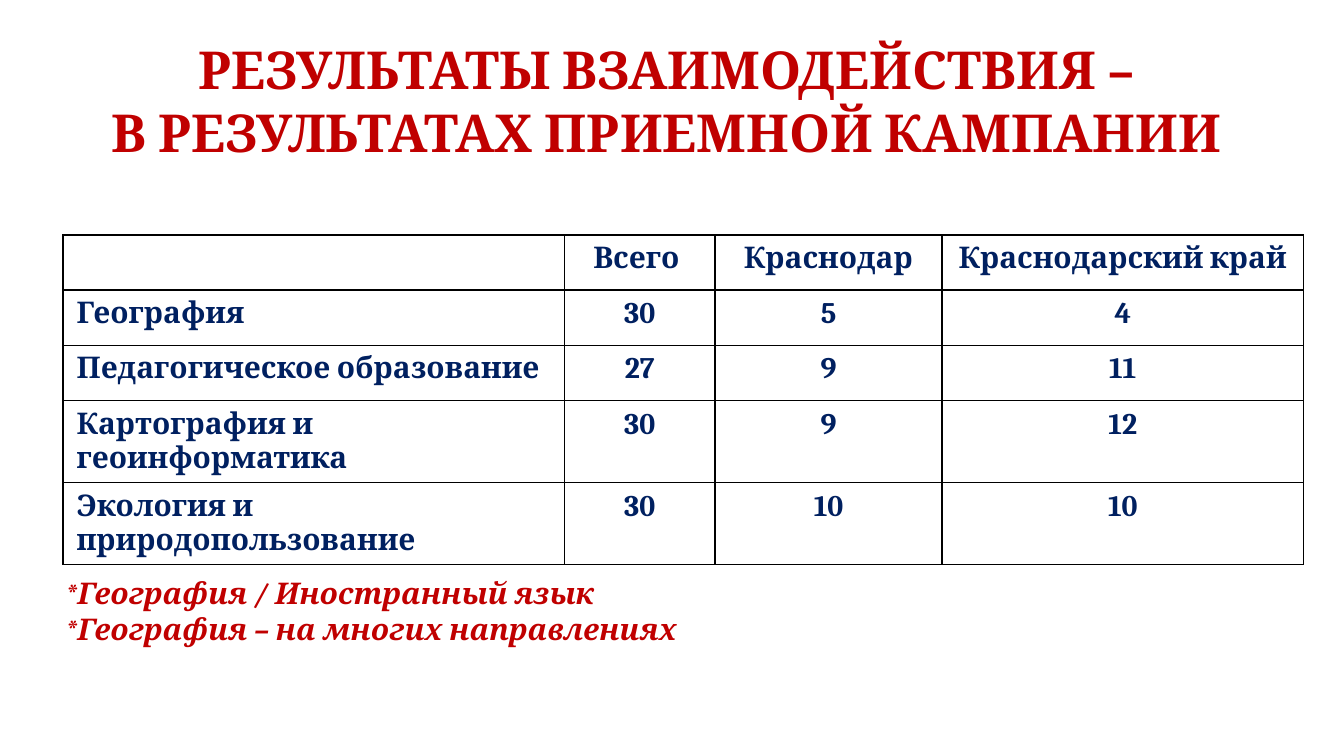
from dataclasses import dataclass

from pptx import Presentation
from pptx.dml.color import RGBColor
from pptx.enum.text import MSO_ANCHOR, MSO_AUTO_SIZE, PP_ALIGN
from pptx.oxml import parse_xml
from pptx.oxml.ns import nsdecls
from pptx.util import Inches, Pt


@dataclass(frozen=True)
class Theme:
    font: str = "Cambria"
    accent: str = "C00000"
    table_text: str = "002060"
    border: str = "000000"
    background: str = "FFFFFF"
    title_size: int = 28
    text_size: int = 16
    border_width: int = 1


class SlideBuilder:
    def __init__(self, slide, theme):
        self.slide = slide
        self.theme = theme
        fill = slide.background.fill
        fill.solid()
        fill.fore_color.rgb = RGBColor.from_string(theme.background)

    def add_run(self, paragraph, text, size, color, italic=False):
        run = paragraph.add_run()
        run.text = text
        font = run.font
        font.name = self.theme.font
        font.size = Pt(size)
        font.bold = True
        font.italic = italic
        font.color.rgb = RGBColor.from_string(color)

    def add_title(self, lines, left, top, width, height):
        title = self.slide.shapes.title
        title.left, title.top = Inches(left), Inches(top)
        title.width, title.height = Inches(width), Inches(height)
        frame = title.text_frame
        frame.word_wrap = True
        frame.auto_size = MSO_AUTO_SIZE.NONE
        frame.vertical_anchor = MSO_ANCHOR.TOP
        paragraph = frame.paragraphs[0]
        paragraph.alignment = PP_ALIGN.CENTER
        for index, line in enumerate(lines):
            if index:
                paragraph.add_line_break()
            self.add_run(paragraph, line, self.theme.title_size, self.theme.accent)

    def add_borders(self, cell):
        properties = cell._tc.get_or_add_tcPr()
        for position, side in enumerate(("lnL", "lnR", "lnT", "lnB")):
            properties.insert(position, parse_xml(
                f'<a:{side} {nsdecls("a")} w="{Pt(self.theme.border_width)}">'
                f'<a:solidFill><a:srgbClr val="{self.theme.border}"/></a:solidFill>'
                f'</a:{side}>'
            ))

    def add_table(self, rows, column_widths, row_height, left, top):
        frame = self.slide.shapes.add_table(
            len(rows), len(column_widths), Inches(left), Inches(top),
            Inches(sum(column_widths)), Inches(row_height * len(rows)),
        )
        table = frame.table
        table.first_row = False
        table.horz_banding = False
        for column, width in zip(table.columns, column_widths):
            column.width = Inches(width)
        for row, values in zip(table.rows, rows):
            row.height = Inches(row_height)
            for index, (cell, value) in enumerate(zip(row.cells, values)):
                cell.fill.background()
                self.add_borders(cell)
                paragraph = cell.text_frame.paragraphs[0]
                paragraph.alignment = PP_ALIGN.CENTER if index else PP_ALIGN.LEFT
                if value:
                    self.add_run(paragraph, value, self.theme.text_size, self.theme.table_text)

    def add_notes_box(self, lines, left, top, width, height):
        box = self.slide.shapes.add_textbox(
            Inches(left), Inches(top), Inches(width), Inches(height)
        )
        frame = box.text_frame
        frame.word_wrap = True
        frame.auto_size = MSO_AUTO_SIZE.SHAPE_TO_FIT_TEXT
        for index, line in enumerate(lines):
            paragraph = frame.add_paragraph() if index else frame.paragraphs[0]
            self.add_run(paragraph, line, self.theme.text_size, self.theme.accent, italic=True)


def main():
    presentation = Presentation()
    presentation.slide_width = Inches(10)
    presentation.slide_height = Inches(10 * 9 / 16)
    title_only_layout = presentation.slide_layouts[5]
    slide = presentation.slides.add_slide(title_only_layout)
    builder = SlideBuilder(slide, Theme())

    builder.add_title(
        ["РЕЗУЛЬТАТЫ ВЗАИМОДЕЙСТВИЯ – ", "В РЕЗУЛЬТАТАХ ПРИЕМНОЙ КАМПАНИИ "],
        0.5, 0.23, 9, 0.89,
    )
    admissions = [
        ["", "Всего ", "Краснодар", "Краснодарский край"],
        ["География", "30", "5", "4"],
        ["Педагогическое образование", "27", "9", "11"],
        ["Картография и геоинформатика", "30", "9", "12"],
        ["Экология и природопользование", "30", "10", "10"],
    ]
    builder.add_table(admissions, [3.73, 1.12, 1.69, 2.69], 0.41, 0.47, 1.75)
    builder.add_notes_box(
        ["*География / Иностранный язык", "*География – на многих направлениях"],
        0.39, 4.23, 8.23, 0.64,
    )
    presentation.save("out.pptx")


if __name__ == "__main__":
    main()
